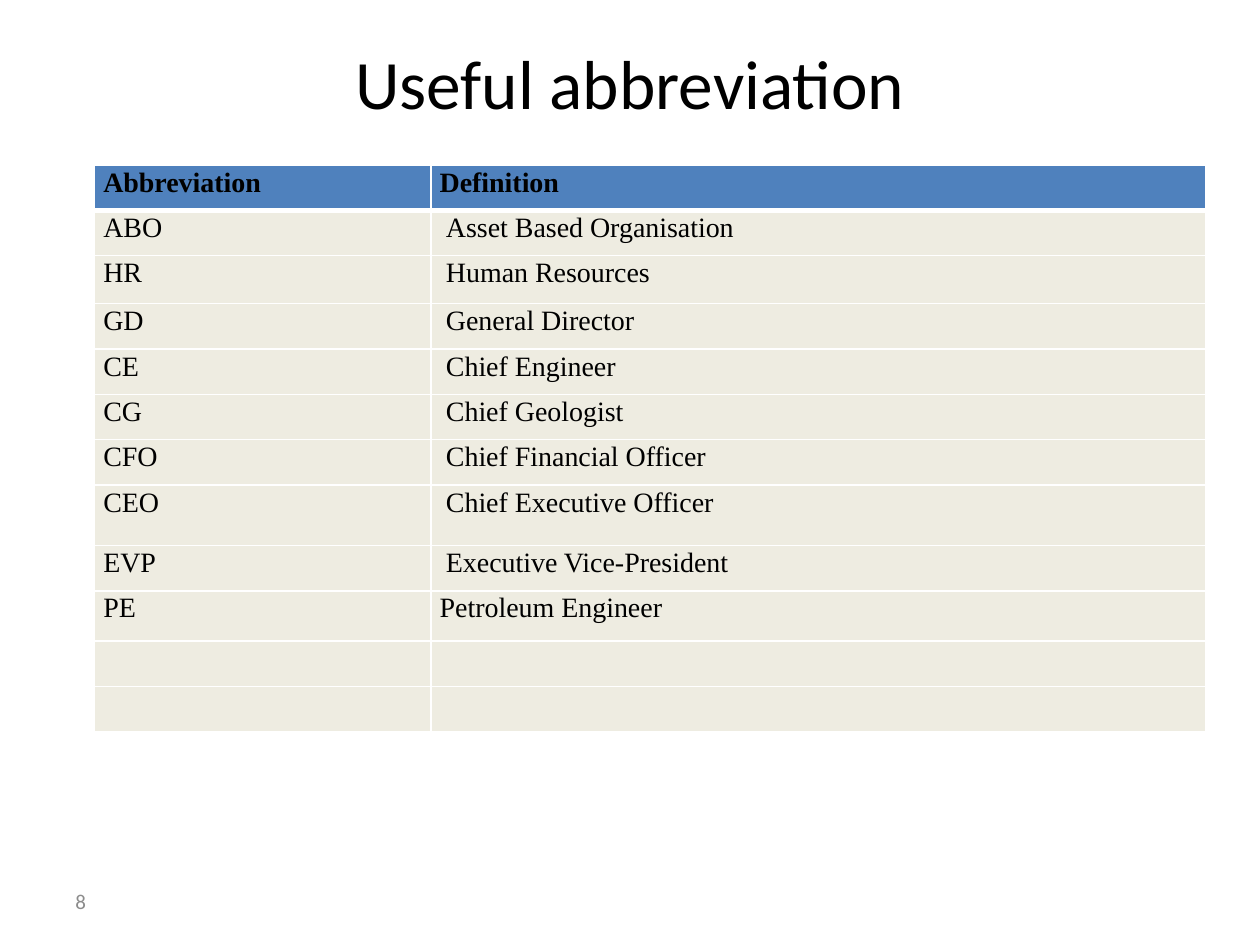
"""Build the slide that lists useful abbreviations."""
from dataclasses import dataclass

from lxml.etree import SubElement as Sub
from pptx import Presentation as Deck
from pptx.dml.color import RGBColor as Rgb
from pptx.enum.text import MSO_ANCHOR as Anchor, PP_ALIGN as Align
from pptx.oxml.ns import qn
from pptx.util import Pt

PX = 9144


@dataclass(frozen=True)
class Theme:
    sans: str = "Calibri"
    serif: str = "Times New Roman"
    ink: str = "000000"
    gray: str = "8C8C8C"
    head: str = "4F81BD"
    body: str = "EEECE1"
    rule: str = "FFFFFF"
    title: float = 39.6
    cell: float = 16
    foot: float = 12
    thin: float = 1
    thick: float = 3
    lead: float = 1.07


@dataclass(frozen=True)
class Font:
    name: str
    size: float
    color: str
    bold: bool = False


@dataclass(frozen=True)
class Label:
    text: str
    box: tuple[int, int, int, int]
    font: Font
    align: Align


@dataclass(frozen=True)
class Row:
    term: str = ""
    sense: str = ""
    high: int = 36
    inset: int = 5


LOOK = Theme()
LABELS = [
    Label("Useful abbreviation", (50, 30, 900, 69),
          Font(LOOK.sans, LOOK.title, LOOK.ink), Align.CENTER),
    Label("8", (50, 695, 233, 40),
          Font(LOOK.sans, LOOK.foot, LOOK.gray), Align.LEFT),
]
LEFT, TOP, PAD = 75, 131, 7
COLS = (267, 615)
ROWS = [
    Row("Abbreviation", "Definition", inset=0),
    Row("ABO", "Asset Based Organisation"),
    Row("HR", "Human Resources", 38),
    Row("GD", "General Director"),
    Row("CE", "Chief Engineer"),
    Row("CG", "Chief Geologist"),
    Row("CFO", "Chief Financial Officer"),
    Row("CEO", "Chief Executive Officer", 48),
    Row("EVP", "Executive Vice-President"),
    Row("PE", "Petroleum Engineer", 40, 0),
    Row(),
    Row(),
]


def put_run(para, text: str, font: Font) -> None:
    """Add one styled run to a paragraph."""
    run = para.add_run()
    run.text = text
    run.font.name = font.name
    run.font.size = Pt(font.size)
    run.font.bold = font.bold
    run.font.color.rgb = Rgb.from_string(font.color)


def put_label(slide, label: Label) -> None:
    """Draw a text box centred on its height."""
    frame = slide.shapes.add_textbox(*(n * PX for n in label.box)).text_frame
    frame.word_wrap = True
    frame.vertical_anchor = Anchor.MIDDLE
    para = frame.paragraphs[0]
    para.alignment = label.align
    put_run(para, label.text, label.font)


def put_rules(cell, top: float, base: float) -> None:
    """Rule all four sides of a cell."""
    props = cell._tc.get_or_add_tcPr()
    sides = {"lnL": LOOK.thin, "lnR": LOOK.thin, "lnT": top, "lnB": base}
    for side, width in sides.items():
        line = Sub(props, qn(f"a:{side}"), w=str(Pt(width)))
        fill = Sub(line, qn("a:solidFill"))
        Sub(fill, qn("a:srgbClr"), val=LOOK.rule)


def put_cell(cell, text: str, inset: int, head: bool) -> None:
    """Fill one cell and write its text."""
    cell.fill.solid()
    cell.fill.fore_color.rgb = Rgb.from_string(LOOK.head if head else LOOK.body)
    cell.margin_left = (PAD + inset) * PX
    cell.margin_right = PAD * PX
    cell.margin_top = cell.margin_bottom = 0
    if text:
        para = cell.text_frame.paragraphs[0]
        para.alignment = Align.LEFT
        para.line_spacing = LOOK.lead
        put_run(para, text, Font(LOOK.serif, LOOK.cell, LOOK.ink, head))


def put_table(slide, rows: list[Row]) -> None:
    """Draw the table of terms."""
    high = sum(row.high for row in rows)
    size = (n * PX for n in (LEFT, TOP, sum(COLS), high))
    table = slide.shapes.add_table(len(rows), len(COLS), *size).table
    table.horz_banding = False
    for col, width in zip(table.columns, COLS):
        col.width = width * PX
    for i, row in enumerate(rows):
        table.rows[i].height = row.high * PX
        top = LOOK.thick if i == 1 else LOOK.thin
        base = LOOK.thick if i == 0 else LOOK.thin
        for j, (text, inset) in enumerate(((row.term, 0), (row.sense, row.inset))):
            cell = table.cell(i, j)
            put_rules(cell, top, base)
            put_cell(cell, text, inset, i == 0)


def main() -> None:
    """Build and save the deck."""
    deck = Deck()
    deck.slide_width, deck.slide_height = 1000 * PX, 750 * PX
    slide = deck.slides.add_slide(deck.slide_layouts[6])
    for label in LABELS:
        put_label(slide, label)
    put_table(slide, ROWS)
    deck.save("out.pptx")


if __name__ == "__main__":
    main()
